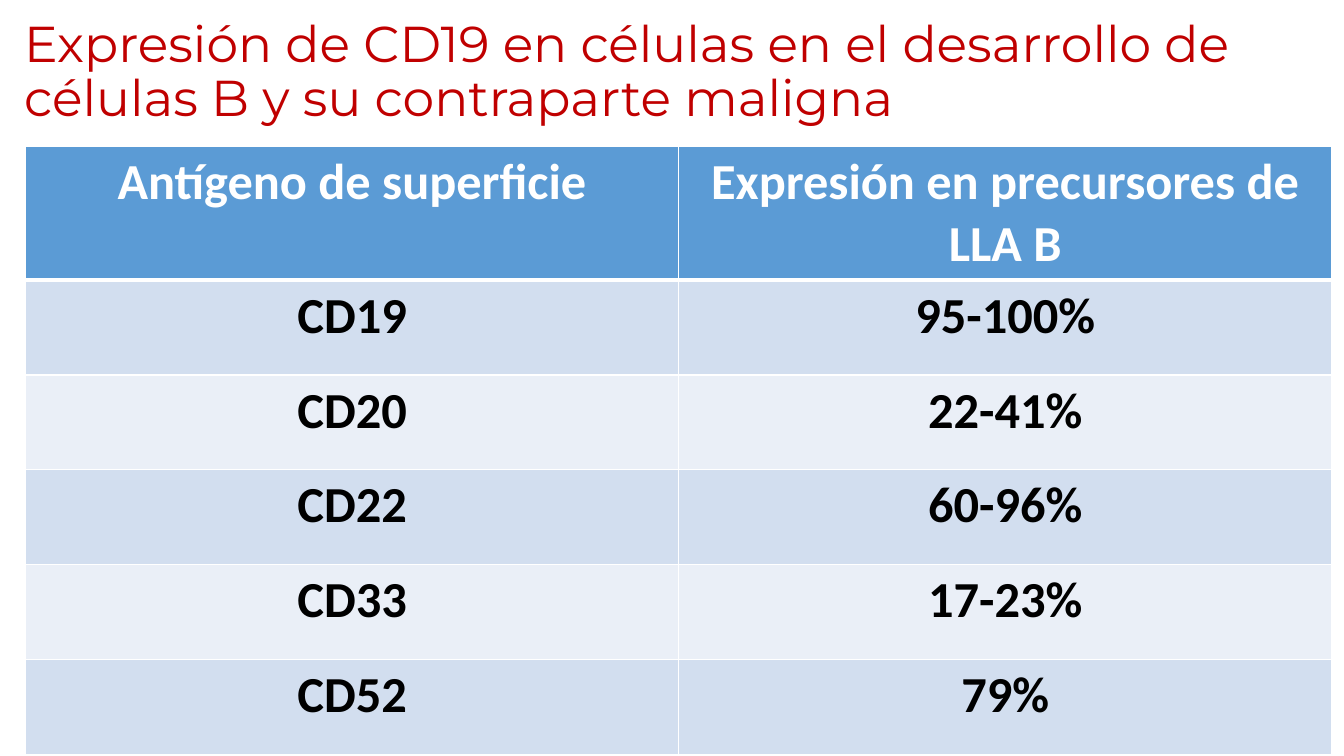
import pptx
import pptx.dml.color
import pptx.enum.text
import pptx.oxml.ns
import pptx.util
from lxml import etree

COLOURS = {
    "title": "C00000",
    "header": "5B9BD5",
    "band_dark": "D2DEEF",
    "band_light": "EAEFF7",
    "rule": "FFFFFF",
    "header_text": "FFFFFF",
    "body_text": "000000",
}
SLIDE_WIDTH = pptx.util.Inches(13.33)
SLIDE_HEIGHT = pptx.util.Inches(7.5)
TITLE = "Expresión de CD19 en células en el desarrollo de células B y su contraparte maligna"
ANTIGENS = [
    ("Antígeno de superficie", "Expresión en precursores de LLA B"),
    ("CD19", "95-100%"),
    ("CD20", "22-41%"),
    ("CD22", "60-96%"),
    ("CD33", "17-23%"),
    ("CD52", "79%"),
]


def across(share):
    return int(SLIDE_WIDTH * share)


def down(share):
    return int(SLIDE_HEIGHT * share)


def rgb(name):
    return pptx.dml.color.RGBColor.from_string(COLOURS[name])


def write(frame, text, font="Calibri", size=36, colour="body_text", bold=False,
          align="CENTER", line_spacing=1.0):
    paragraph = frame.paragraphs[0]
    paragraph.alignment = getattr(pptx.enum.text.PP_ALIGN, align)
    paragraph.line_spacing = line_spacing
    run = paragraph.add_run()
    run.text = text
    run.font.name = font
    run.font.size = pptx.util.Pt(size)
    run.font.bold = bold
    run.font.color.rgb = rgb(colour)


def rule_cell(cell, **widths):
    """Draw cell borders; keywords are the sides L, R, T, B with widths in points."""
    properties = cell._tc.get_or_add_tcPr()
    for side, width in widths.items():
        line = etree.SubElement(properties, pptx.oxml.ns.qn(f"a:ln{side}"),
                                w=str(pptx.util.Pt(width)))
        fill = etree.SubElement(line, pptx.oxml.ns.qn("a:solidFill"))
        etree.SubElement(fill, pptx.oxml.ns.qn("a:srgbClr"), val=COLOURS["rule"])


def add_title(slide):
    title = slide.shapes.title
    title.left, title.top = across(0.0105), 0
    title.width, title.height = across(0.98), down(0.193)
    frame = title.text_frame
    frame.word_wrap = True
    frame.auto_size = pptx.enum.text.MSO_AUTO_SIZE.NONE
    frame.vertical_anchor = pptx.enum.text.MSO_ANCHOR.MIDDLE
    write(frame, TITLE, font="Montserrat", colour="title", align="LEFT", line_spacing=0.9)


def add_antigen_table(slide):
    row_height = down(0.1255)
    table = slide.shapes.add_table(
        len(ANTIGENS), len(ANTIGENS[0]), across(0.019), down(0.194),
        across(0.972), row_height * len(ANTIGENS)).table
    for row_index, entries in enumerate(ANTIGENS):
        table.rows[row_index].height = row_height
        is_header = row_index == 0
        band = "header" if is_header else ("band_light", "band_dark")[row_index % 2]
        for column_index, entry in enumerate(entries):
            cell = table.cell(row_index, column_index)
            rule_cell(cell, L=1, R=1, T=3 if row_index == 1 else 1, B=3 if is_header else 1)
            cell.fill.solid()
            cell.fill.fore_color.rgb = rgb(band)
            write(cell.text_frame, entry, bold=True,
                  colour="header_text" if is_header else "body_text")


def main():
    deck = pptx.Presentation()
    deck.slide_width, deck.slide_height = SLIDE_WIDTH, SLIDE_HEIGHT
    slide = deck.slides.add_slide(deck.slide_layouts[5])
    add_title(slide)
    add_antigen_table(slide)
    deck.save("out.pptx")


if __name__ == "__main__":
    main()
